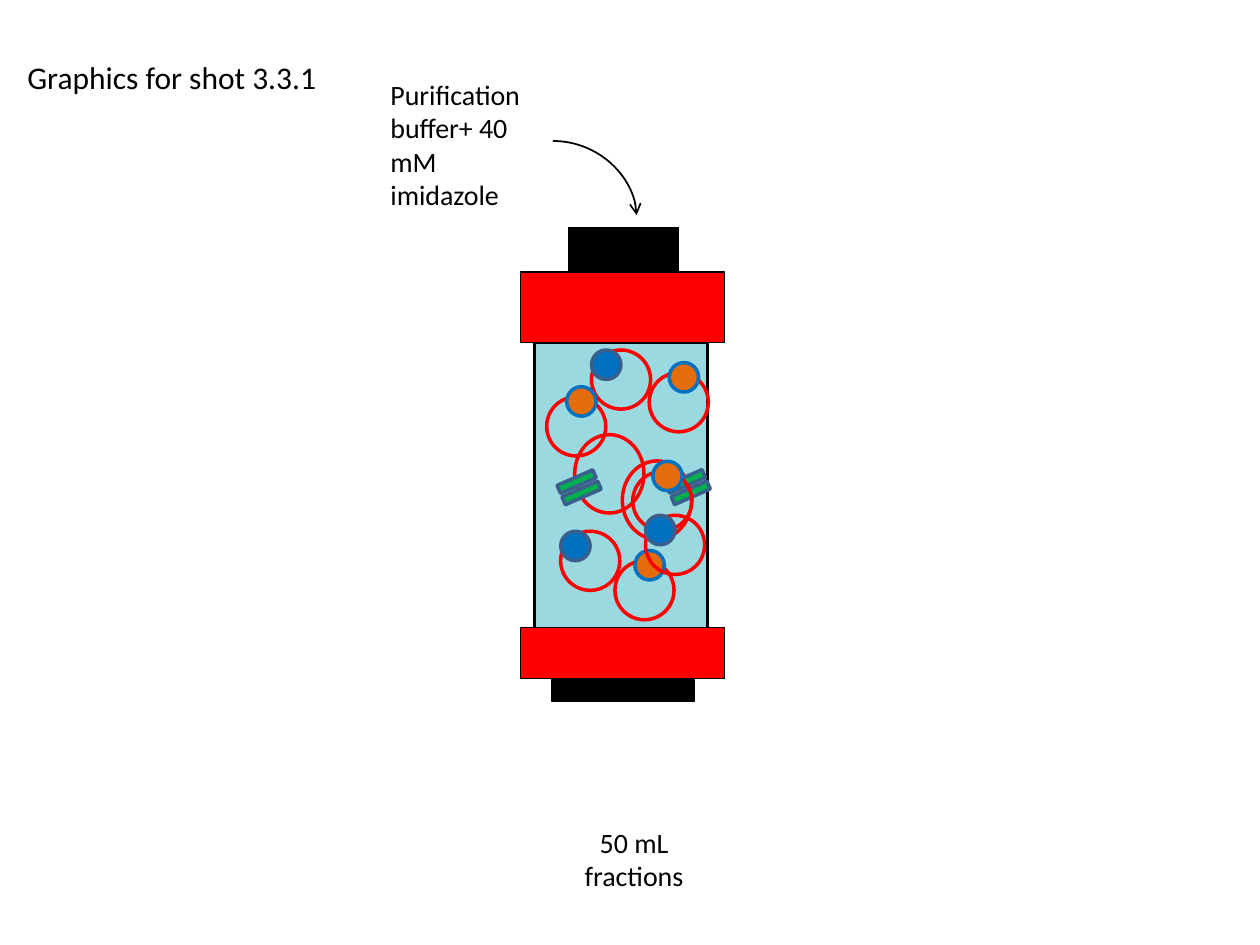
from lxml.etree import SubElement
from pptx import Presentation
from pptx.dml.color import RGBColor
from pptx.enum.shapes import MSO_CONNECTOR, MSO_SHAPE
from pptx.enum.text import PP_ALIGN
from pptx.oxml.ns import qn
from pptx.util import Pt

BLACK = RGBColor(0x00, 0x00, 0x00)
RED = RGBColor(0xFF, 0x00, 0x00)
AQUA = RGBColor(0x9A, 0xD9, 0xE0)
ORANGE = RGBColor(0xE4, 0x6C, 0x0A)
BLUE = RGBColor(0x00, 0x70, 0xC0)
SLATE = RGBColor(0x3A, 0x5F, 0x8C)
GREEN = RGBColor(0x00, 0xB0, 0x50)

# Column parts: left, top, width, height, fill, line width
COLUMN = [
    (305.3, 195.8, 98.9, 190.8, AQUA, 1.5),   # resin bed
    (297.4, 155.5, 116.8, 40.3, RED, 0.75),   # top cap
    (297.4, 358.6, 116.8, 29.3, RED, 0.75),   # bottom cap
    (324.8, 130.2, 63, 25, BLACK, 0.75),      # inlet
    (315.2, 388.6, 81.8, 12, BLACK, 0.75),    # outlet
]

# Bound proteins: offset from the bead, size, rotation, shape, fill, line
DOT = 16.8
BAR_W, BAR_H, BAR_ANGLE = 5, 22.3, 66.4
BOUND = {
    "target": [(11.4, -5.8, DOT, DOT, 0, MSO_SHAPE.OVAL, ORANGE, BLUE)],
    "other": [(0, 0, DOT, DOT, 0, MSO_SHAPE.OVAL, BLUE, SLATE)],
    "left bars": [(x, y, BAR_W, BAR_H, BAR_ANGLE, MSO_SHAPE.RECTANGLE, GREEN, SLATE)
                  for x, y in [(-1.4, 15.7), (1.4, 22.2)]],
    "right bars": [(x, y, BAR_W, BAR_H, BAR_ANGLE, MSO_SHAPE.RECTANGLE, GREEN, SLATE)
                   for x, y in [(33.8, 0.6), (36.6, 7.1)]],
}

# Beads from back to front: left, top, what is bound
ROUND, TALL = (33.8, 33.8), (39.6, 44.8)
BEADS = [
    (351.4, 320.4, ROUND, "target"),
    (338, 200, ROUND, "other"),
    (328.4, 248.4, TALL, "left bars"),
    (355.6, 263.4, TALL, "right bars"),
    (361.6, 269.4, ROUND, "target"),
    (371, 213, ROUND, "target"),
    (312.4, 226.8, ROUND, "target"),
    (368.9, 294.5, ROUND, "other"),
    (320.4, 303.6, ROUND, "other"),
]

# Labels: text, left, top, width, height, size, alignment
LABELS = [
    ("Purification buffer+ 40 mM imidazole", 216, 40.6, 93, 85, 16, PP_ALIGN.LEFT),
    ("50 mL fractions", 323, 468, 78.6, 46, 16, PP_ALIGN.CENTER),
    ("Graphics for shot 3.3.1", 8.6, 29.5, 194.4, 51, 18, PP_ALIGN.LEFT),
]

ARROW = (316, 80.6, 363.8, 123)


def add_part(parent, kind, x, y, w, h, fill, line, width, angle=0):
    s = parent.shapes.add_shape(kind, Pt(x), Pt(y), Pt(w), Pt(h))
    s.shadow.inherit = False
    s.rotation = angle
    if fill is None:
        s.fill.background()
    else:
        s.fill.solid()
        s.fill.fore_color.rgb = fill
    s.line.color.rgb = line
    s.line.width = Pt(width)


def add_label(slide, text, x, y, w, h, size, align):
    tf = slide.shapes.add_textbox(Pt(x), Pt(y), Pt(w), Pt(h)).text_frame
    tf.word_wrap = True
    p = tf.paragraphs[0]
    p.alignment = align
    r = p.add_run()
    r.text = text
    r.font.name = "Calibri"
    r.font.size = Pt(size)
    r.font.color.rgb = BLACK


prs = Presentation()
prs.slide_width, prs.slide_height = Pt(720), Pt(540)
slide = prs.slides.add_slide(prs.slide_layouts[6])

# Column
column = slide.shapes.add_group_shape()
for x, y, w, h, fill, width in COLUMN:
    add_part(column, MSO_SHAPE.RECTANGLE, x, y, w, h, fill, BLACK, width)

# Beads with bound proteins
for x, y, (w, h), bound in BEADS:
    bead = slide.shapes.add_group_shape()
    add_part(bead, MSO_SHAPE.OVAL, x, y, w, h, None, RED, 2)
    for dx, dy, pw, ph, angle, kind, fill, line in BOUND[bound]:
        add_part(bead, kind, x + dx, y + dy, pw, ph, fill, line, 2, angle)

# Curved arrow into the inlet
arrow = slide.shapes.add_connector(MSO_CONNECTOR.CURVE, *map(Pt, ARROW))
arrow.line.color.rgb = BLACK
arrow.line.width = Pt(1)
spPr = arrow._element.spPr
spPr.find(qn("a:prstGeom")).set("prst", "curvedConnector2")
SubElement(spPr.find(qn("a:ln")), qn("a:tailEnd"), type="arrow")
SubElement(spPr, qn("a:effectLst"))

# Labels
for label in LABELS:
    add_label(slide, *label)

prs.save("out.pptx")
